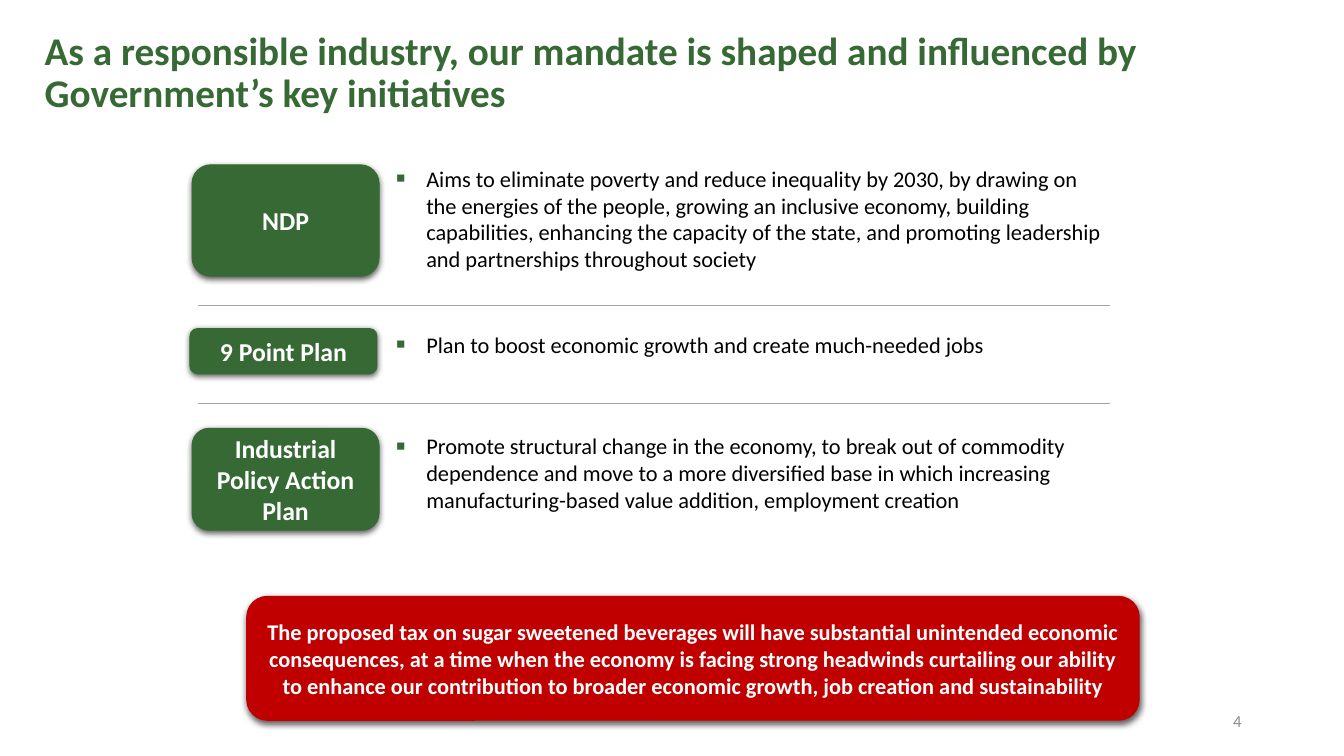
"""Build the slide on government initiatives that shape the industry mandate."""
from lxml import etree
from pptx import Presentation
from pptx.dml.color import RGBColor
from pptx.enum.shapes import MSO_CONNECTOR, MSO_SHAPE
from pptx.enum.text import MSO_ANCHOR, MSO_AUTO_SIZE, PP_ALIGN
from pptx.oxml.ns import qn
from pptx.util import Pt

PX = 9525
ROUNDED = MSO_SHAPE.ROUNDED_RECTANGLE
STRAIGHT = MSO_CONNECTOR.STRAIGHT
TOP, MIDDLE = MSO_ANCHOR.TOP, MSO_ANCHOR.MIDDLE
LEFT, CENTER, RIGHT = PP_ALIGN.LEFT, PP_ALIGN.CENTER, PP_ALIGN.RIGHT
NO_FIT = MSO_AUTO_SIZE.NONE
COMPARISON_LAYOUT = 4

COLORS = {"green": "366934", "red": "C00000", "rule": "A5A5A5", "number": "8C8C8C",
          "black": "000000", "white": "FFFFFF"}

LABEL_WIDTH = 178
DETAIL_LEFT, DETAIL_WIDTH = 377, 679
RULE_LEFT, RULE_RIGHT = 189, 1057
RULE_TOPS = (291, 384)

TITLE = ("As a responsible industry, our mandate is shaped and influenced by "
         "Government’s key initiatives")
INITIATIVES = [
    ("NDP", (183, 157, 106), (157, 104),
     "Aims to eliminate poverty and reduce inequality by 2030, by drawing on the energies "
     "of the people, growing an inclusive economy, building capabilities, enhancing the "
     "capacity of the state, and promoting leadership and partnerships throughout society"),
    ("9 Point Plan", (181, 313, 43), (315, 26),
     "Plan to boost economic growth and create much-needed jobs"),
    ("Industrial Policy Action Plan", (183, 408, 97), (412, 78),
     "Promote structural change in the economy, to break out of commodity dependence and "
     "move to a more diversified base in which increasing manufacturing-based value "
     "addition, employment creation"),
]
WARNING = ("The proposed tax on sugar sweetened beverages will have substantial unintended "
           "economic consequences, at a time when the economy is facing strong headwinds "
           "curtailing our ability to enhance our contribution to broader economic growth, "
           "job creation and sustainability")


def px(length):
    """Turn a length in px into EMU."""
    return length * PX


def rgb(name):
    """Look up a named colour."""
    return RGBColor.from_string(COLORS[name])


def place(shape, box):
    """Move and size a shape to a left, top, width, height box."""
    for attribute, length in zip(("left", "top", "width", "height"), box):
        setattr(shape, attribute, px(length))


def add_xml(parent, tag, **attributes):
    """Append a drawing element and return it."""
    return etree.SubElement(parent, qn(tag), attributes)


def write(shape, text, size, color, bold=False, align=LEFT, anchor=TOP, spacing=1.0, margin=None):
    """Write one formatted paragraph into a shape and return it."""
    frame = shape.text_frame
    frame.text = text
    paragraph = frame.paragraphs[0]
    frame_format = {"word_wrap": True, "auto_size": NO_FIT, "vertical_anchor": anchor}
    if margin is not None:
        for side in ("left", "top", "right", "bottom"):
            frame_format[f"margin_{side}"] = margin
    formats = [
        (frame, frame_format),
        (paragraph, {"alignment": align, "line_spacing": spacing,
                     "space_before": Pt(0), "space_after": Pt(0)}),
        (paragraph.runs[0].font, {"name": "Calibri", "size": Pt(size), "bold": bold}),
    ]
    for target, values in formats:
        for attribute, value in values.items():
            setattr(target, attribute, value)
    paragraph.runs[0].font.color.rgb = rgb(color)
    return paragraph


def add_panel(slide, box, text, size, fill):
    """Add a rounded, shadowed panel with bold white centred text."""
    panel = slide.shapes.add_shape(ROUNDED, *map(px, box))
    panel.fill.solid()
    panel.fill.fore_color.rgb = rgb(fill)
    panel.line.color.rgb = rgb(fill)
    panel.line.width = Pt(0.75)
    panel.shadow.inherit = False
    effects = panel.element.spPr.find(qn("a:effectLst"))
    shadow = add_xml(effects, "a:outerShdw", blurRad=str(Pt(4.5)), dist=str(Pt(1.5)),
                     dir="5400000", algn="ctr", rotWithShape="0")
    shade = add_xml(shadow, "a:srgbClr", val=COLORS["black"])
    add_xml(shade, "a:alpha", val="63000")
    write(panel, text, size, "white", bold=True, align=CENTER, anchor=MIDDLE)


def fill_detail(placeholder, box, text):
    """Turn a body placeholder into a green-bulleted detail."""
    place(placeholder, box)
    paragraph = write(placeholder, text, 16, "black", margin=0)
    properties = paragraph._p.get_or_add_pPr()
    properties.set("marL", str(px(29)))
    properties.set("indent", str(px(-29)))
    bullet_color = add_xml(properties, "a:buClr")
    add_xml(bullet_color, "a:srgbClr", val=COLORS["green"])
    add_xml(properties, "a:buSzPct", val="125000")
    add_xml(properties, "a:buFont", typeface="Calibri")
    add_xml(properties, "a:buChar", char="▪")


def add_rule(slide, top):
    """Add a thin horizontal rule between initiatives."""
    rule = slide.shapes.add_connector(STRAIGHT, px(RULE_LEFT), px(top), px(RULE_RIGHT), px(top))
    rule.line.color.rgb = rgb("rule")
    rule.line.width = Pt(0.5)
    add_xml(rule._element.spPr, "a:effectLst")


def add_page_number(slide, number):
    """Add the page number at the lower right."""
    page_number = slide.shapes.add_textbox(*map(px, (904, 667, 288, 38)))
    write(page_number, number, 12, "number", align=RIGHT, anchor=MIDDLE)


def main():
    """Build and save the slide."""
    deck = Presentation()
    deck.slide_width, deck.slide_height = px(1280), px(720)
    slide = deck.slides.add_slide(deck.slide_layouts[COMPARISON_LAYOUT])
    title, *details = slide.placeholders
    place(title, (33, 25, 1064, 96))
    write(title, TITLE, 28, "green", bold=True, spacing=0.9)

    for detail, (name, label, (top, height), text) in zip(details, INITIATIVES):
        label_left, label_top, label_height = label
        add_panel(slide, (label_left, label_top, LABEL_WIDTH, label_height), name, 18.4, "green")
        fill_detail(detail, (DETAIL_LEFT, top, DETAIL_WIDTH, height), text)
    for unused in details[len(INITIATIVES):]:
        unused.element.getparent().remove(unused.element)

    for top in RULE_TOPS:
        add_rule(slide, top)
    add_panel(slide, (235, 568, 850, 118), WARNING, 16, "red")
    add_page_number(slide, "4")
    deck.save("out.pptx")


if __name__ == "__main__":
    main()
